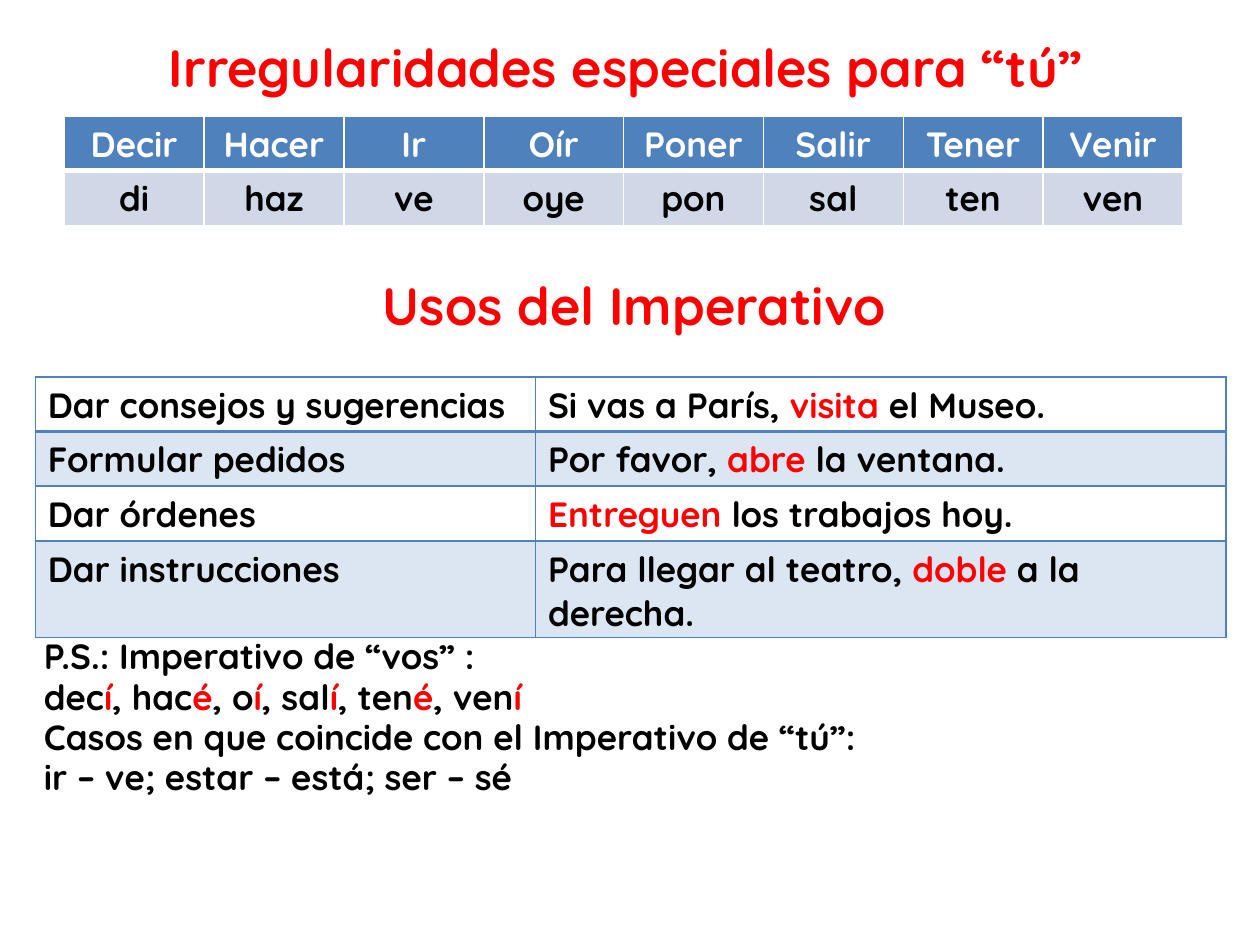
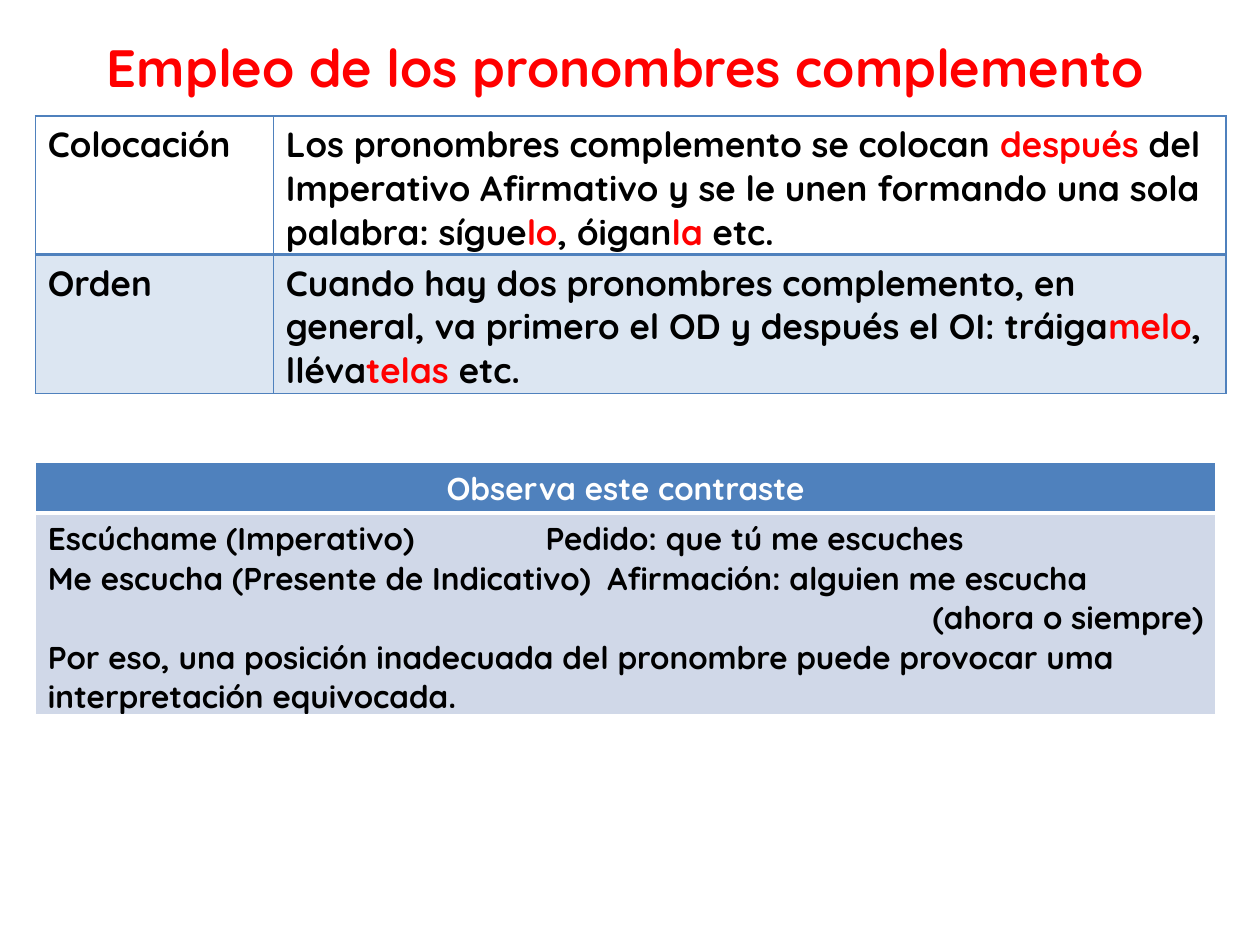
from dataclasses import dataclass

from lxml import etree
from pptx import Presentation
from pptx.dml.color import RGBColor
from pptx.enum import text as t
from pptx.oxml import ns
from pptx.util import Inches, Pt

FONT = "Quicksand"
RED = RGBColor(0xFF, 0x00, 0x00)
BLACK = RGBColor(0x00, 0x00, 0x00)
WHITE = RGBColor(0xFF, 0xFF, 0xFF)
BLUE = RGBColor(0x4F, 0x81, 0xBD)
PALE_BLUE = RGBColor(0xDC, 0xE6, 0xF2)
GREY_BLUE = RGBColor(0xD0, 0xD8, 0xE8)
LEFT = t.PP_ALIGN.LEFT
CENTER = t.PP_ALIGN.CENTER
RIGHT = t.PP_ALIGN.RIGHT


@dataclass(frozen=True)
class Line:
    text: str
    align: t.PP_ALIGN = LEFT
    tab: float | None = None


@dataclass(frozen=True)
class Look:
    fills: tuple[RGBColor | None, ...]
    border: RGBColor
    divider: float
    heading: RGBColor = BLACK


@dataclass(frozen=True)
class Grid:
    left: float
    top: float
    columns: tuple[float, ...]
    heights: tuple[float, ...]
    rows: tuple[tuple[tuple[Line, ...], ...], ...]
    look: Look
    size: int = 20


HEADED = Look((BLUE, GREY_BLUE), WHITE, 3, WHITE)
OUTLINED = Look((None, PALE_BLUE), BLUE, 2)


def write(frame, lines: tuple[Line, ...], *, size: int = 20,
          color: RGBColor = BLACK, spacing: float | None = None) -> None:
    """Fill a text frame; parts between asterisks are red."""
    frame.word_wrap = True
    for number, line in enumerate(lines):
        paragraph = frame.paragraphs[0] if number == 0 else frame.add_paragraph()
        paragraph.alignment = line.align
        if spacing:
            paragraph.line_spacing = spacing
        if line.tab:
            stops = etree.SubElement(paragraph._p.get_or_add_pPr(), ns.qn("a:tabLst"))
            etree.SubElement(stops, ns.qn("a:tab"), pos=str(Inches(line.tab)), algn="l")
        for position, part in enumerate(line.text.split("*")):
            if part:
                run = paragraph.add_run()
                run.text = part
                run.font.name = FONT
                run.font.size = Pt(size)
                run.font.bold = True
                run.font.color.rgb = RED if position % 2 else color


def add_text(slide, left: float, top: float, width: float, height: float,
             *lines: Line, **style) -> None:
    box = slide.shapes.add_textbox(*map(Inches, (left, top, width, height)))
    write(box.text_frame, lines, **style)


def add_title(slide, title: str, left: float = 0.28, top: float = 0.23) -> None:
    add_text(slide, left, top, 9.37, 0.61, Line(title, CENTER), size=30, color=RED)


def set_borders(cell, color: RGBColor, above: float, below: float) -> None:
    properties = cell._tc.get_or_add_tcPr()
    widths = {"lnL": 1, "lnR": 1, "lnT": above, "lnB": below}
    for index, (side, width) in enumerate(widths.items()):
        edge = etree.Element(ns.qn(f"a:{side}"), w=str(Pt(width)))
        fill = etree.SubElement(edge, ns.qn("a:solidFill"))
        etree.SubElement(fill, ns.qn("a:srgbClr"), val=str(color))
        properties.insert(index, edge)


def add_grid(slide, grid: Grid) -> None:
    table = slide.shapes.add_table(
        len(grid.rows), len(grid.columns), Inches(grid.left), Inches(grid.top),
        Inches(sum(grid.columns)), Inches(sum(grid.heights))).table
    table.first_row = table.horz_banding = False
    for column, width in zip(table.columns, grid.columns):
        column.width = Inches(width)
    look = grid.look
    for r, (row, height) in enumerate(zip(grid.rows, grid.heights)):
        table.rows[r].height = Inches(height)
        fill = look.fills[r % 2]
        for c, lines in enumerate(row):
            cell = table.cell(r, c)
            write(cell.text_frame, lines, size=grid.size,
                  color=look.heading if r == 0 else BLACK)
            if fill is None:
                cell.fill.background()
            else:
                cell.fill.solid()
                cell.fill.fore_color.rgb = fill
            set_borders(cell, look.border, look.divider if r == 1 else 1,
                        look.divider if r == 0 else 1)


def text_rows(*rows: tuple[str, ...], align: t.PP_ALIGN = LEFT):
    return tuple(tuple((Line(entry, align),) for entry in row) for row in rows)


IRREGULAR_FORMS = Grid(
    0.51, 0.92, (1.11,) * 8, (0.43,) * 2,
    text_rows(("Decir", "Hacer", "Ir", "Oír", "Poner", "Salir", "Tener", "Venir"),
              ("di", "haz", "ve", "oye", "pon", "sal", "ten", "ven"), align=CENTER),
    HEADED)

IMPERATIVE_USES = Grid(
    0.28, 2.99, (3.97, 5.48), (0.43, 0.43, 0.43, 0.77),
    text_rows(
        ("Dar consejos y sugerencias", "Si vas a París, *visita *el Museo."),
        ("Formular pedidos", "Por favor, *abre *la ventana."),
        ("Dar órdenes", "*Entreguen *los trabajos hoy."),
        ("Dar instrucciones", "Para llegar al teatro, *doble* a la derecha.")),
    OUTLINED)

PRONOUN_RULES = Grid(
    0.28, 0.92, (1.89, 7.56), (1.1, 1.1),
    text_rows(
        ("Colocación",
         "Los pronombres complemento se colocan *después *del Imperativo Afirmativo "
         "y se le unen formando una sola palabra: sígue*lo*, óigan*la* etc."),
        ("Orden",
         "Cuando hay dos pronombres complemento, en general, va primero el OD y "
         "después el OI: tráiga*melo*, lléva*telas* etc.")),
    OUTLINED)

CONTRAST = Grid(
    0.28, 3.67, (9.37,), (0.4, 1.6),
    (((Line("Observa este contraste", CENTER),),),
     ((Line("Escúchame (Imperativo)\tPedido: que tú me escuches", tab=3.95),
       Line("Me escucha (Presente de Indicativo)\tAfirmación: alguien me escucha",
            tab=4.44),
       Line("(ahora o siempre)", RIGHT),
       Line("Por eso, una posición inadecuada del pronombre puede provocar uma "
            "interpretación equivocada.")),)),
    HEADED, 18)


def build_imperative(slide) -> None:
    add_title(slide, "Irregularidades especiales para “tú”")
    add_grid(slide, IRREGULAR_FORMS)
    add_title(slide, "Usos del Imperativo", 0.35, 2.12)
    add_grid(slide, IMPERATIVE_USES)
    add_text(slide, 0.25, 5.01, 9.47, 2.12,
             Line("P.S.: Imperativo de “vos” :"),
             Line("dec*í*, hac*é*, o*í*, sal*í*, ten*é*, ven*í*"),
             Line("Casos en que coincide con el Imperativo de “tú”:"),
             Line("ir – ve; estar – está; ser – sé"), spacing=0.96)


def build_pronouns(slide) -> None:
    add_title(slide, "Empleo de los pronombres complemento")
    add_grid(slide, PRONOUN_RULES)
    add_grid(slide, CONTRAST)


def main() -> None:
    deck = Presentation()
    deck.slide_width, deck.slide_height = Inches(10), Inches(7.5)
    for build in (build_imperative, build_pronouns):
        build(deck.slides.add_slide(deck.slide_layouts[6]))
    deck.save("out.pptx")


if __name__ == "__main__":
    main()
